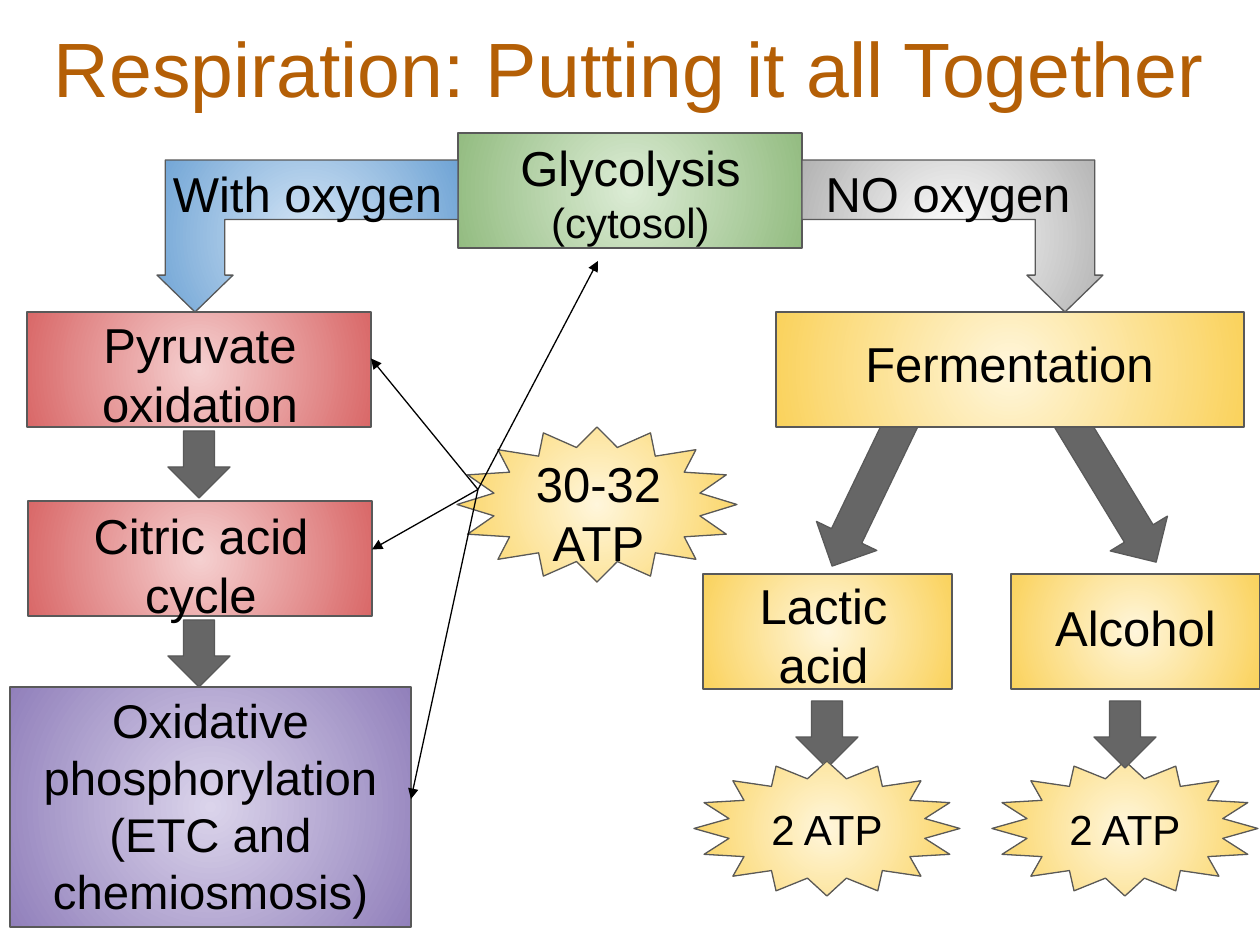
from lxml import etree
from pptx import Presentation
from pptx.dml.color import RGBColor
from pptx.enum.shapes import MSO_CONNECTOR, MSO_SHAPE
from pptx.enum.text import MSO_ANCHOR, PP_ALIGN
from pptx.oxml.ns import qn
from pptx.util import Emu, Pt

RECT = MSO_SHAPE.RECTANGLE
STAR = MSO_SHAPE.STAR_16_POINT
DOWN = MSO_SHAPE.DOWN_ARROW
SLANTED = MSO_SHAPE.LEFT_ARROW
BENT = MSO_SHAPE.BENT_UP_ARROW
STRAIGHT = MSO_CONNECTOR.STRAIGHT
CENTER = PP_ALIGN.CENTER
TOP, MIDDLE = MSO_ANCHOR.TOP, MSO_ANCHOR.MIDDLE
LEFT_SIDE, RIGHT_SIDE = 1, 3

THEME = {
    "font": "Arial", "title": "B45F06", "text": "000000", "outline": "595959",
    "title size": 44, "label size": 28, "long label size": 27, "small size": 24,
    "line spacing": 1.0, "line width": 0.75,
    "green": ("DCECD5", "93BC81"), "blue": ("D4E5F5", "70A4D5"),
    "red": ("F5D0D0", "D96868"), "grey": ("FFFFFF", "B3B3B3"),
    "purple": ("DBD4EB", "9180BB"), "gold": ("FFF6DB", "FAD25C"),
    "dark": ("666666",),
}
ADJUSTMENTS = {BENT: (0.391, 0.25, 0.243), STAR: (0.375,)}

TITLE = ("Respiration: Putting it all Together", (31, 8, 1197, 105))
STEP_SIZE = (344, 115)
PRODUCT_SIZE = (249, 115)
DOWN_SIZE = (62, 67)
SLANTED_SIZE = (170, 67)
BENT_SIZE = (301, 152)
BURST_SIZE = (266, 135)

SHAPES = [
    (RECT, "green", (458, 133), STEP_SIZE, 0),
    (BENT, "blue", (157, 160), BENT_SIZE, 180),
    (RECT, "red", (27, 312), STEP_SIZE, 0),
    (RECT, "red", (28, 501), STEP_SIZE, 0),
    (BENT, "grey", (802, 160), BENT_SIZE, 180),
    (RECT, "purple", (10, 687), (401, 240), 0),
    (DOWN, "dark", (168, 431), DOWN_SIZE, 0),
    (DOWN, "dark", (168, 620), DOWN_SIZE, 0),
    (SLANTED, "dark", (784, 456), SLANTED_SIZE, 295.7),
    (SLANTED, "dark", (1027, 456), SLANTED_SIZE, 238.7),
    (RECT, "gold", (703, 574), PRODUCT_SIZE, 0),
    (RECT, "gold", (1011, 574), PRODUCT_SIZE, 0),
    (RECT, "gold", (776, 312), (468, 115), 0),
    (STAR, "gold", (992, 761), BURST_SIZE, 0),
    (DOWN, "dark", (796, 701), DOWN_SIZE, 0),
    (DOWN, "dark", (1094, 701), DOWN_SIZE, 0),
    (STAR, "gold", (694, 761), BURST_SIZE, 0),
    (STAR, "gold", (457, 427), (280, 155), 0),
]
MIRRORED = "grey"
BURST_TEXT = [("2 ATP", "small size")]

LABELS = {
    "glycolysis": ([("Glycolysis", "label size"), ("(cytosol)", "small size")],
                   (460, 125, 341, 113)),
    "pyruvate": ([("Pyruvate", "label size"), ("oxidation", "label size")],
                 (29, 302, 342, 113)),
    "citric": ([("Citric acid cycle", "label size")], (30, 493, 342, 113)),
    "with oxygen": ([("With oxygen", "label size")], (154, 151, 307, 67)),
    "no oxygen": ([("NO oxygen", "label size")], (801, 151, 294, 67)),
    "oxidative": ([("Oxidative phosphorylation", "long label size"),
                   ("(ETC and chemiosmosis)", "long label size")],
                  (10, 679, 401, 240)),
    "fermentation": ([("Fermentation", "label size")], (777, 321, 465, 97)),
    "lactic": ([("Lactic acid", "label size")], (703, 563, 241, 97)),
    "alcohol": ([("Alcohol", "label size")], (1015, 585, 241, 97)),
    "total": ([("30-32 ATP", "label size")], (478, 441, 241, 97)),
}
ATP_SOURCES = ["pyruvate", "citric", "oxidative"]
GLYCOLYSIS_TIP = (598, 261)


def px(value):
    return Emu(round(value * 914400 / 126))


def color(name):
    return RGBColor.from_string(THEME[name])


def write(shape, paragraphs, anchor=TOP, text_color="text"):
    frame = shape.text_frame
    frame.word_wrap = True
    frame.vertical_anchor = anchor
    frame.margin_left = frame.margin_right = px(12.6)
    frame.margin_top = frame.margin_bottom = px(12.6)
    frame.text = "\n".join(text for text, size in paragraphs)
    for paragraph, (text, size) in zip(frame.paragraphs, paragraphs):
        paragraph.alignment = CENTER
        paragraph.line_spacing = THEME["line spacing"]
        paragraph.space_before = Pt(0)
        paragraph.font.name = THEME["font"]
        paragraph.font.size = Pt(THEME[size])
        paragraph.font.color.rgb = color(text_color)


def paint(shape, colors):
    if len(colors) == 1:
        shape.fill.solid()
        shape.fill.fore_color.rgb = RGBColor.from_string(colors[0])
        return
    shape.fill.gradient()
    for stop, value in zip(shape.fill.gradient_stops, colors):
        stop.color.rgb = RGBColor.from_string(value)
    gradient = shape._element.spPr.find(qn("a:gradFill"))
    gradient.remove(gradient.find(qn("a:lin")))
    radial = etree.SubElement(gradient, qn("a:path"), path="circle")
    etree.SubElement(radial, qn("a:fillToRect"),
                     dict.fromkeys("ltrb", "50000"))


def add_shape(slide, kind, fill, position, size, rotation):
    shape = slide.shapes.add_shape(kind, *map(px, position + size))
    shape.shadow.inherit = False
    shape.rotation = rotation
    for index, value in enumerate(ADJUSTMENTS.get(kind, ())):
        shape.adjustments[index] = value
    if fill == MIRRORED:
        shape._element.spPr.xfrm.set("flipH", "1")
    paint(shape, THEME[fill])
    shape.line.color.rgb = color("outline")
    shape.line.width = Pt(THEME["line width"])
    if kind == STAR and size == BURST_SIZE:
        write(shape, BURST_TEXT, MIDDLE)


def add_label(slide, paragraphs, box):
    label = slide.shapes.add_textbox(*map(px, box))
    write(label, paragraphs)
    return label


def add_arrow(slide, source, tip):
    arrow = slide.shapes.add_connector(STRAIGHT, 0, 0, *map(px, tip))
    arrow.begin_connect(source, LEFT_SIDE)
    arrow.line.color.rgb = color("text")
    arrow.line.width = Pt(THEME["line width"])
    etree.SubElement(arrow.line._get_or_add_ln(), qn("a:tailEnd"), type="triangle")
    etree.SubElement(arrow._element.spPr, qn("a:effectLst"))
    return arrow


def main():
    presentation = Presentation()
    presentation.slide_width, presentation.slide_height = px(1260), px(945)
    slide = presentation.slides.add_slide(presentation.slide_layouts[5])
    text, box = TITLE
    title = slide.shapes.title
    title.left, title.top, title.width, title.height = map(px, box)
    write(title, [(text, "title size")], TOP, "title")
    for entry in SHAPES:
        add_shape(slide, *entry)
    labels = {name: add_label(slide, *entry) for name, entry in LABELS.items()}
    add_arrow(slide, labels["total"], GLYCOLYSIS_TIP)
    for name in ATP_SOURCES:
        arrow = add_arrow(slide, labels["total"], GLYCOLYSIS_TIP)
        arrow.end_connect(labels[name], RIGHT_SIDE)
    presentation.save("out.pptx")


if __name__ == "__main__":
    main()
